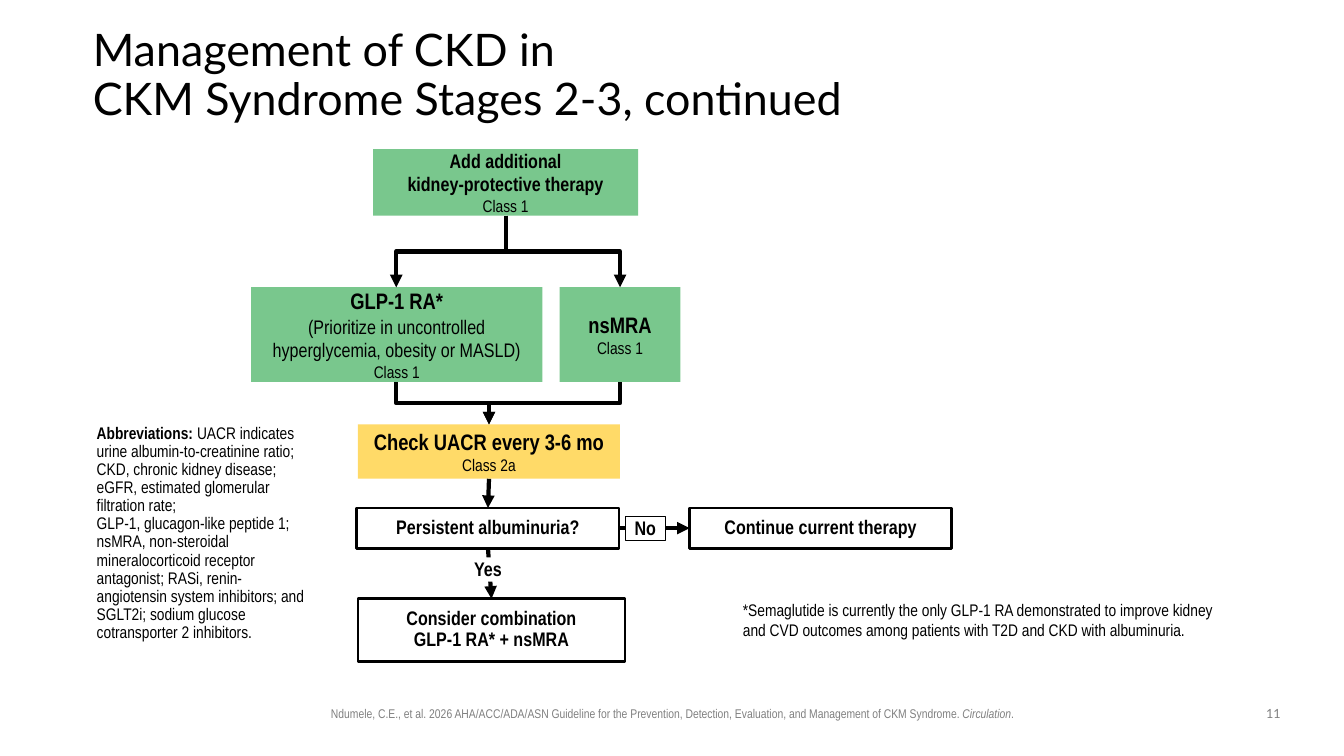
import copy
from dataclasses import dataclass

import pptx
import pptx.dml.color
import pptx.enum.shapes
import pptx.enum.text
import pptx.oxml
import pptx.oxml.ns
import pptx.util

Inches = pptx.util.Inches
Pt = pptx.util.Pt
ALIGN = pptx.enum.text.PP_ALIGN
ANCHOR = pptx.enum.text.MSO_ANCHOR
CONNECTOR = pptx.enum.shapes.MSO_CONNECTOR
qn = pptx.oxml.ns.qn

BLACK, WHITE, GRAY = "000000", "FFFFFF", "808080"
GREEN, YELLOW = "79C78D", "FFDA68"
BODY_FONT, TITLE_FONT = "Arial Narrow", "Lato"
DEFAULT_INSETS = (0.1, 0.05, 0.1, 0.05)
NO_INSETS = (0, 0, 0, 0)


@dataclass(frozen=True)
class Run:
    text: str
    size: float = 14
    bold: bool = False
    italic: bool = False


@dataclass(frozen=True)
class Box:
    left: float
    top: float
    width: float
    height: float
    paragraphs: list[list[Run]]
    fill: str = WHITE
    line_width: float = 0
    insets: tuple = NO_INSETS
    anchor: int = ANCHOR.MIDDLE
    line_spacing: float = 1.0


@dataclass(frozen=True)
class TextBlock:
    left: float
    top: float
    width: float
    height: float
    paragraphs: list[list[Run]]
    color: str = BLACK
    font: str = BODY_FONT
    align: int = ALIGN.LEFT
    anchor: int = ANCHOR.TOP
    insets: tuple = DEFAULT_INSETS
    line_spacing: float = 1.0


def rgb(value: str):
    return pptx.dml.color.RGBColor.from_string(value)


def write_text(shape, paragraphs, *, font=BODY_FONT, color=BLACK, align=ALIGN.CENTER,
               anchor=ANCHOR.MIDDLE, insets=DEFAULT_INSETS, line_spacing=1.0) -> None:
    frame = shape.text_frame
    frame.word_wrap = True
    frame.auto_size = pptx.enum.text.MSO_AUTO_SIZE.NONE
    frame.vertical_anchor = anchor
    frame.margin_left, frame.margin_top, frame.margin_right, frame.margin_bottom = map(Inches, insets)
    for index, runs in enumerate(paragraphs):
        paragraph = frame.add_paragraph() if index else frame.paragraphs[0]
        paragraph.alignment = align
        paragraph.line_spacing = line_spacing
        for item in runs:
            for number, line in enumerate(item.text.split("\n")):
                if number:
                    paragraph.add_line_break()
                    paragraph._p[-1].append(copy.deepcopy(run.font._element))
                run = paragraph.add_run()
                run.text = line
                run.font.name = font
                run.font.size = Pt(item.size)
                run.font.bold = item.bold
                run.font.italic = item.italic
                run.font.color.rgb = rgb(color)


def draw_box(slide, box: Box):
    shape = slide.shapes.add_shape(
        pptx.enum.shapes.MSO_SHAPE.RECTANGLE,
        *map(Inches, (box.left, box.top, box.width, box.height)))
    shape.shadow.inherit = False
    shape.fill.solid()
    shape.fill.fore_color.rgb = rgb(box.fill)
    if box.line_width:
        shape.line.color.rgb = rgb(BLACK)
        shape.line.width = Pt(box.line_width)
    else:
        shape.line.fill.background()
    write_text(shape, box.paragraphs, anchor=box.anchor, insets=box.insets,
               line_spacing=box.line_spacing)
    return shape


def draw_text(slide, block: TextBlock) -> None:
    shape = slide.shapes.add_textbox(
        *map(Inches, (block.left, block.top, block.width, block.height)))
    write_text(shape, block.paragraphs, font=block.font, color=block.color, align=block.align,
               anchor=block.anchor, insets=block.insets, line_spacing=block.line_spacing)


def style_arrow(connector) -> None:
    connector.line.color.rgb = rgb(BLACK)
    connector.line.width = Pt(3)
    properties = connector._element.spPr
    tail = pptx.oxml.parse_xml(
        f'<a:tailEnd {pptx.oxml.ns.nsdecls("a")} type="triangle"/>')
    properties.find(qn("a:ln")).append(tail)
    properties.append(pptx.oxml.parse_xml(f'<a:effectLst {pptx.oxml.ns.nsdecls("a")}/>'))


def draw_straight_arrow(slide, source, source_side: int, target, target_side: int) -> None:
    connector = slide.shapes.add_connector(CONNECTOR.STRAIGHT, 0, 0, 0, 0)
    connector.begin_connect(source, source_side)
    connector.end_connect(target, target_side)
    style_arrow(connector)


def draw_bent_arrow(slide, start: tuple, end: tuple) -> None:
    center_x, center_y = (start[0] + end[0]) / 2, (start[1] + end[1]) / 2
    half_width, half_height = (end[1] - start[1]) / 2, abs(end[0] - start[0]) / 2
    goes_right = end[0] > start[0]
    if goes_right:
        half_width = -half_width
    connector = slide.shapes.add_connector(
        CONNECTOR.ELBOW,
        *map(Inches, (center_x - half_width, center_y - half_height,
                      center_x + half_width, center_y + half_height)))
    degrees = 270 if goes_right else 90
    connector._element.spPr.find(qn("a:xfrm")).set("rot", str(degrees * 60000))
    style_arrow(connector)


def outlined(left: float, top: float, width: float, height: float, text: str) -> Box:
    return Box(left, top, width, height, [[Run(text, bold=True)]], line_width=2, line_spacing=0.9)


def label(left: float, top: float, text: str, line_width: float = 0) -> Box:
    return Box(left, top, 0.4, 0.24, [[Run(text, bold=True)]], line_width=line_width,
               anchor=ANCHOR.TOP)


BOXES = {
    "therapy": Box(3.7, 1.48, 2.63, 0.66, [[
        Run("Add additional\nkidney-protective therapy\n", bold=True), Run("Class 1", 12)]],
        GREEN, insets=DEFAULT_INSETS),
    "glp": Box(2.49, 2.85, 2.89, 0.94, [
        [Run("GLP-1 RA*", 16, True)],
        [Run("(Prioritize in uncontrolled hyperglycemia, obesity or MASLD) "), Run("Class 1", 12)]],
        GREEN, insets=DEFAULT_INSETS),
    "nsmra": Box(5.55, 2.85, 1.2, 0.94, [[Run("nsMRA\n", 16, True), Run("Class 1", 12)]],
                 GREEN, insets=DEFAULT_INSETS),
    "check": Box(3.55, 4.21, 2.6, 0.54, [[
        Run("Check UACR every 3-6 mo\n", 16, True), Run("Class 2a", 12)]],
        YELLOW, insets=DEFAULT_INSETS),
    "question": outlined(3.54, 5.04, 2.6, 0.4, "Persistent albuminuria?"),
    "continue": outlined(6.84, 5.04, 2.6, 0.4, "Continue current therapy"),
    "combine": outlined(3.55, 5.94, 2.65, 0.62, "Consider combination\nGLP-1 RA* + nsMRA"),
}
STRAIGHT_ARROWS = [("check", 2, "question", 0), ("question", 3, "continue", 1),
                   ("question", 2, "combine", 0)]
BENT_ARROWS = [((5.02, 2.14), (3.93, 2.85)), ((5.02, 2.14), (6.15, 2.85)),
               ((3.93, 3.79), (4.85, 4.21)), ((6.15, 3.79), (4.85, 4.21))]
LABELS = [label(6.2, 5.12, "No", 0.75), label(4.64, 5.53, "Yes")]
TEXT_BLOCKS = [
    TextBlock(0.96, 5.27, 2.23, 1.15, [[
        Run("Abbreviations: ", 12, True),
        Run("UACR indicates urine albumin-to-creatinine ratio; CKD, chronic kidney disease; "
            "eGFR, estimated glomerular filtration rate;\nGLP-1, glucagon-like peptide 1; nsMRA, "
            "non-steroidal mineralocorticoid receptor antagonist; RASi, renin-angiotensin system "
            "inhibitors; and SGLT2i; sodium glucose cotransporter 2 inhibitors.", 12)]],
        anchor=ANCHOR.BOTTOM, insets=(0, 0.05, 0.1, 0.05), line_spacing=0.9),
    TextBlock(7.27, 5.9, 5.36, 0.5, [
        [Run("*Semaglutide is currently the only GLP-1 RA demonstrated to improve kidney", 12)],
        [Run("and CVD outcomes among patients with T2D and CKD with albuminuria.", 12)]]),
    TextBlock(2.36, 6.95, 8.62, 0.25, [[
        Run("Ndumele, C.E., et al. 2026 AHA/ACC/ADA/ASN Guideline for the Prevention, Detection, "
            "Evaluation, and Management of CKM Syndrome. ", 9),
        Run("Circulation", 9, italic=True), Run(".", 9)]], GRAY, align=ALIGN.CENTER),
    TextBlock(12.42, 6.95, 0.42, 0.26, [[Run("11", 9)]], GRAY, TITLE_FONT, ALIGN.CENTER),
]


def main() -> None:
    presentation = pptx.Presentation()
    presentation.slide_width, presentation.slide_height = Inches(13.33), Inches(7.5)
    slide = presentation.slides.add_slide(presentation.slide_layouts[5])
    title = slide.shapes.title
    title.left, title.top, title.width, title.height = map(Inches, (0.92, 0.4, 11.5, 0.72))
    write_text(title, [[Run("Management of CKD in\nCKM Syndrome Stages 2-3, continued", 32)]],
               font=TITLE_FONT, align=ALIGN.LEFT, insets=NO_INSETS, line_spacing=0.9)
    shapes = {name: draw_box(slide, box) for name, box in BOXES.items()}
    for source, source_side, target, target_side in STRAIGHT_ARROWS:
        draw_straight_arrow(slide, shapes[source], source_side, shapes[target], target_side)
    for start, end in BENT_ARROWS:
        draw_bent_arrow(slide, start, end)
    for item in LABELS:
        draw_box(slide, item)
    for block in TEXT_BLOCKS:
        draw_text(slide, block)
    presentation.save("out.pptx")


if __name__ == "__main__":
    main()
